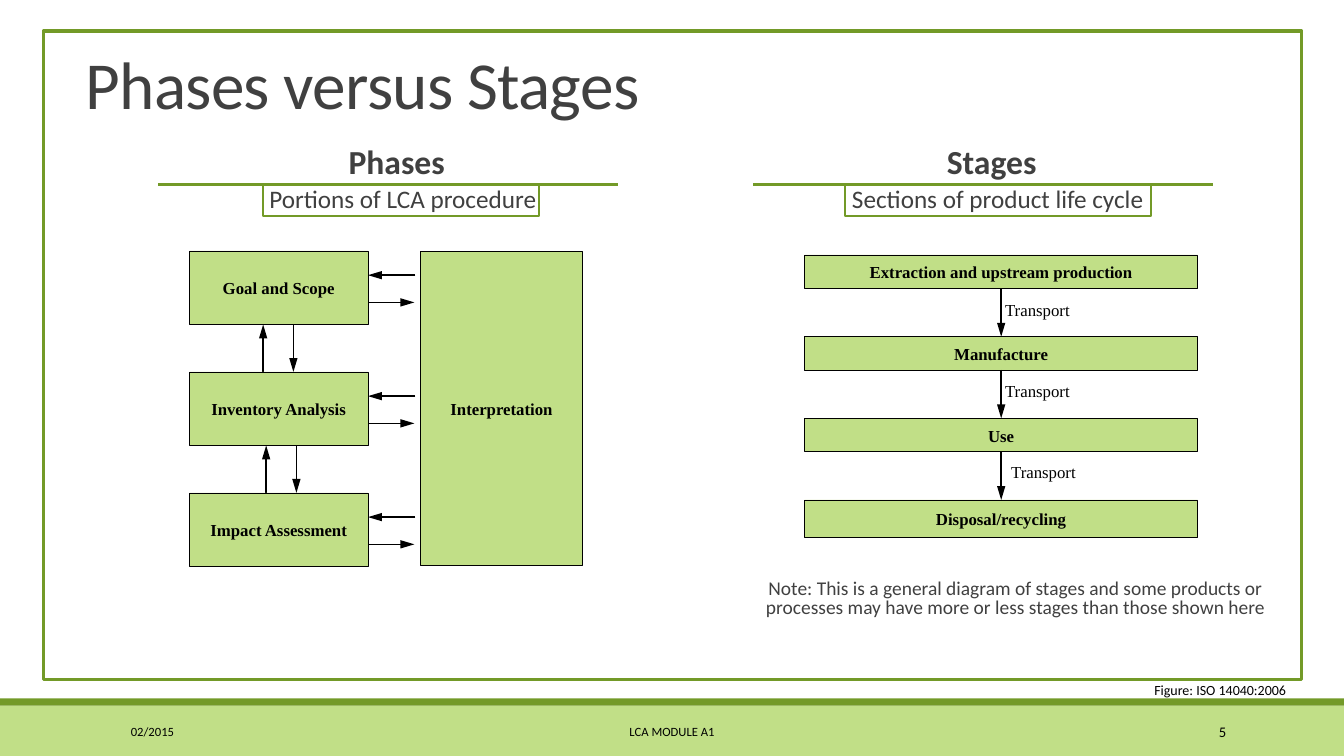
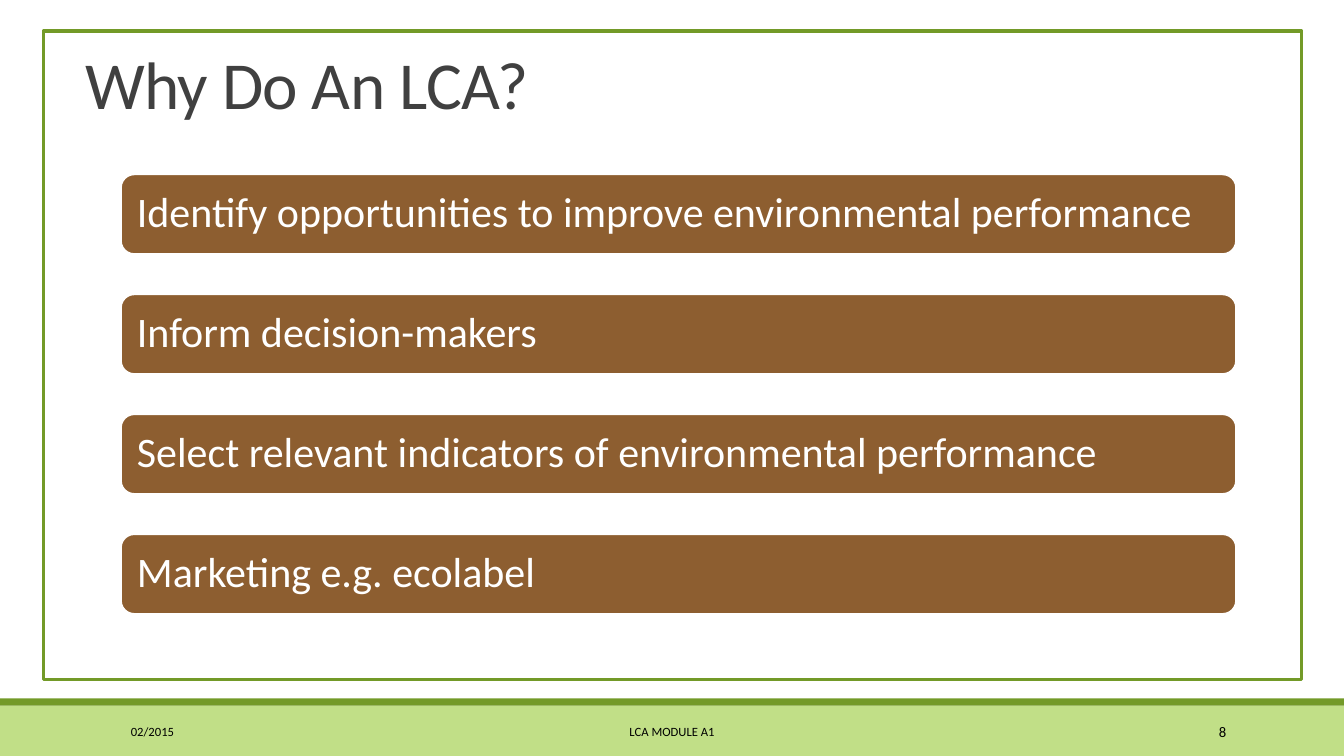
from lxml import etree
from pptx import Presentation
from pptx.dml.color import RGBColor
from pptx.enum.shapes import MSO_CONNECTOR as Connector, MSO_SHAPE as Shape
from pptx.enum.text import MSO_ANCHOR as Anchor, PP_ALIGN as Align
from pptx.oxml.ns import qn
from pptx.util import Inches, Pt

COLORS = {
    "leaf": "739A28",
    "lime": "C1DF87",
    "brown": "8D5E30",
    "text": "404040",
    "black": "000000",
    "white": "FFFFFF",
}
SANS, SERIF = "Calibri", "Times New Roman"
BOTTOM, TOP = 2, 0  # connection sites of a rectangle


def color(name):
    return RGBColor.from_string(COLORS[name])


def write(paragraph, text, size=12, font=SANS, ink="black", bold=False,
          align=Align.LEFT, leading=None, before=None, after=None,
          indent=0, tracking=None):
    """Fill one paragraph; tracking is in hundredths of a point."""
    if indent:
        paragraph._p.get_or_add_pPr().set("marL", str(Inches(indent)))
    paragraph.alignment = align
    if leading:
        paragraph.line_spacing = leading
    if before:
        paragraph.space_before = Pt(before)
    if after:
        paragraph.space_after = Pt(after)
    run = paragraph.add_run()
    run.text = text
    run.font.name, run.font.size, run.font.bold = font, Pt(size), bold
    run.font.color.rgb = color(ink)
    if tracking:
        run._r.get_or_add_rPr().set("spc", str(tracking))


class Deck:
    FOOTER_TOP, FOOTER_HEIGHT = 7.06, 0.4

    def __init__(self):
        self.prs = Presentation()
        self.prs.slide_width, self.prs.slide_height = Inches(13.33), Inches(7.5)
        self.slide = None

    def new_slide(self, title, number):
        self.slide = self.prs.slides.add_slide(self.prs.slide_layouts[6])
        self.box(0, 7, 13.33, 0.5, fill="lime")
        self.box(0, 6.93, 13.33, 0.07, fill="leaf")
        self.box(0.43, 0.31, 12.48, 6.43, line="leaf", weight=2.5)
        self.text(0.75, 0.3, 11, 0.97, title, anchor=Anchor.BOTTOM, size=48,
                  ink="text", leading=0.85, tracking=-50)
        for left, width, label, size, align in (
                (1.2, 2.7, "02/2015", 9, Align.LEFT),
                (4.03, 5.27, "LCA MODULE A1", 9, Align.CENTER),
                (10.83, 1.43, number, 10.5, Align.RIGHT)):
            self.text(left, self.FOOTER_TOP, width, self.FOOTER_HEIGHT, label,
                      anchor=Anchor.MIDDLE, size=size, align=align)

    def box(self, left, top, width, height, label=None, fill=None, line=None,
            weight=0.5, shape=Shape.RECTANGLE, inset=0.1, **style):
        box = self.slide.shapes.add_shape(
            shape, Inches(left), Inches(top), Inches(width), Inches(height))
        box.shadow.inherit = False
        if fill:
            box.fill.solid()
            box.fill.fore_color.rgb = color(fill)
        else:
            box.fill.background()
        if line:
            box.line.color.rgb = color(line)
            box.line.width = Pt(weight)
        else:
            box.line.fill.background()
        if label:
            frame = box.text_frame
            frame.word_wrap = True
            frame.vertical_anchor = Anchor.MIDDLE
            frame.margin_left = frame.margin_right = Inches(inset)
            write(frame.paragraphs[0], label, **style)
        return box

    def step(self, left, top, width, height, label):
        return self.box(left, top, width, height, label, fill="lime", line="black",
                        font=SERIF, bold=True, align=Align.CENTER, leading=1.05)

    def text(self, left, top, width, height, text, anchor=Anchor.TOP, inset=0.1, **style):
        frame = self.slide.shapes.add_textbox(
            Inches(left), Inches(top), Inches(width), Inches(height)).text_frame
        frame.word_wrap = True
        frame.vertical_anchor = anchor
        frame.margin_left = frame.margin_right = Inches(inset)
        write(frame.paragraphs[0], text, **style)
        return frame

    def line(self, x1, y1, x2, y2, ink="black", weight=1.0, arrow=False):
        line = self.slide.shapes.add_connector(
            Connector.STRAIGHT, Inches(x1), Inches(y1), Inches(x2), Inches(y2))
        line.line.color.rgb = color(ink)
        line.line.width = Pt(weight)
        if arrow:
            etree.SubElement(line.line._get_or_add_ln(), qn("a:tailEnd"),
                             type="triangle", w="med", len="lg")
        etree.SubElement(line._element.spPr, qn("a:effectLst"))
        return line

    def arrow(self, x1, y1, x2, y2):
        return self.line(x1, y1, x2, y2, arrow=True)

    def column_heading(self, left, heading, subheading, frame_left, frame_width):
        """Heading over a rule, with a framed subheading hanging from the rule."""
        frame = self.text(left, 1.39, 5.51, 1, heading, inset=0, size=24, ink="text",
                          bold=True, align=Align.CENTER, leading=0.9, after=2, indent=0.1)
        write(frame.add_paragraph(), subheading, size=18, ink="text",
              align=Align.CENTER, leading=0.9, before=2, after=4, indent=0.22)
        rule_y, rule_left = 1.83, left + 0.44
        self.line(rule_left, rule_y, rule_left + 4.56, rule_y, ink="leaf", weight=1.5)
        self.box(frame_left, rule_y, frame_width, 0.31, line="leaf", weight=1.5)


def draw_phases(deck):
    left, top, width, height, pitch = 1.88, 2.49, 1.77, 0.73, 1.2
    phases = ("Goal and Scope", "Inventory Analysis", "Impact Assessment")
    right = left + width
    deck.step(4.17, top, 1.61, 3.12, "Interpretation")
    for i, phase in enumerate(phases):
        y = top + i * pitch
        deck.step(left, y, width, height, phase)
        deck.arrow(4.12, y + 0.24, right, y + 0.24)
        deck.arrow(right, y + 0.51, 4.11, y + 0.51)
        if i < len(phases) - 1:
            up_x = 2.61 + 0.03 * i
            down_x = up_x + 0.3
            deck.arrow(up_x, y + pitch, up_x, y + height)
            deck.arrow(down_x, y + height, down_x, y + pitch)


def draw_stages(deck):
    left, top, width, height, pitch = 7.98, 2.53, 3.9, 0.33, 0.81
    stages = (("Extraction and upstream production", height), ("Manufacture", height),
              ("Use", height), ("Disposal/recycling", 0.37))
    boxes = [deck.step(left, top + i * pitch, width, tall, stage)
             for i, (stage, tall) in enumerate(stages)]
    middle = left + width / 2
    for i, (upper, lower) in enumerate(zip(boxes, boxes[1:])):
        y = top + i * pitch
        transport = deck.arrow(middle, y + height, middle, y + pitch)
        transport.begin_connect(upper, BOTTOM)
        transport.end_connect(lower, TOP)
    for label_left, label_top in ((9.87, 2.92), (9.87, 3.73), (9.93, 4.53)):
        deck.text(label_left, label_top, 1.45, 0.3, "Transport", font=SERIF)


def phases_versus_stages(deck):
    deck.new_slide("Phases versus Stages", "5")
    draw_phases(deck)
    deck.column_heading(1.13, "Phases", "Portions of LCA procedure", 2.61, 2.74)
    deck.column_heading(7.03, "Stages", "Sections of product life cycle", 8.38, 3.04)
    draw_stages(deck)
    deck.text(7.21, 5.71, 5.51, 0.53,
              "Note: This is a general diagram of stages and some products or "
              "processes may have more or less stages than those shown here",
              inset=0, size=13.9, ink="text", align=Align.CENTER, leading=0.8,
              after=4, indent=0.22)
    deck.text(11.35, 6.71, 1.58, 0.27, "Figure: ISO 14040:2006", size=10)


def why_do_an_lca(deck):
    deck.new_slide("Why Do An LCA?", "8")
    reasons = ("Identify opportunities to improve environmental performance",
               "Inform decision-makers",
               "Select relevant indicators of environmental performance",
               "Marketing e.g. ecolabel")
    for i, reason in enumerate(reasons):
        deck.box(1.2, 1.73 + i * 1.19, 11.06, 0.79, reason, fill="brown", line="white",
                 weight=1.25, shape=Shape.ROUNDED_RECTANGLE, inset=0.12,
                 size=30, ink="white", leading=0.9)


def main():
    deck = Deck()
    phases_versus_stages(deck)
    why_do_an_lca(deck)
    deck.prs.save("out.pptx")


if __name__ == "__main__":
    main()
